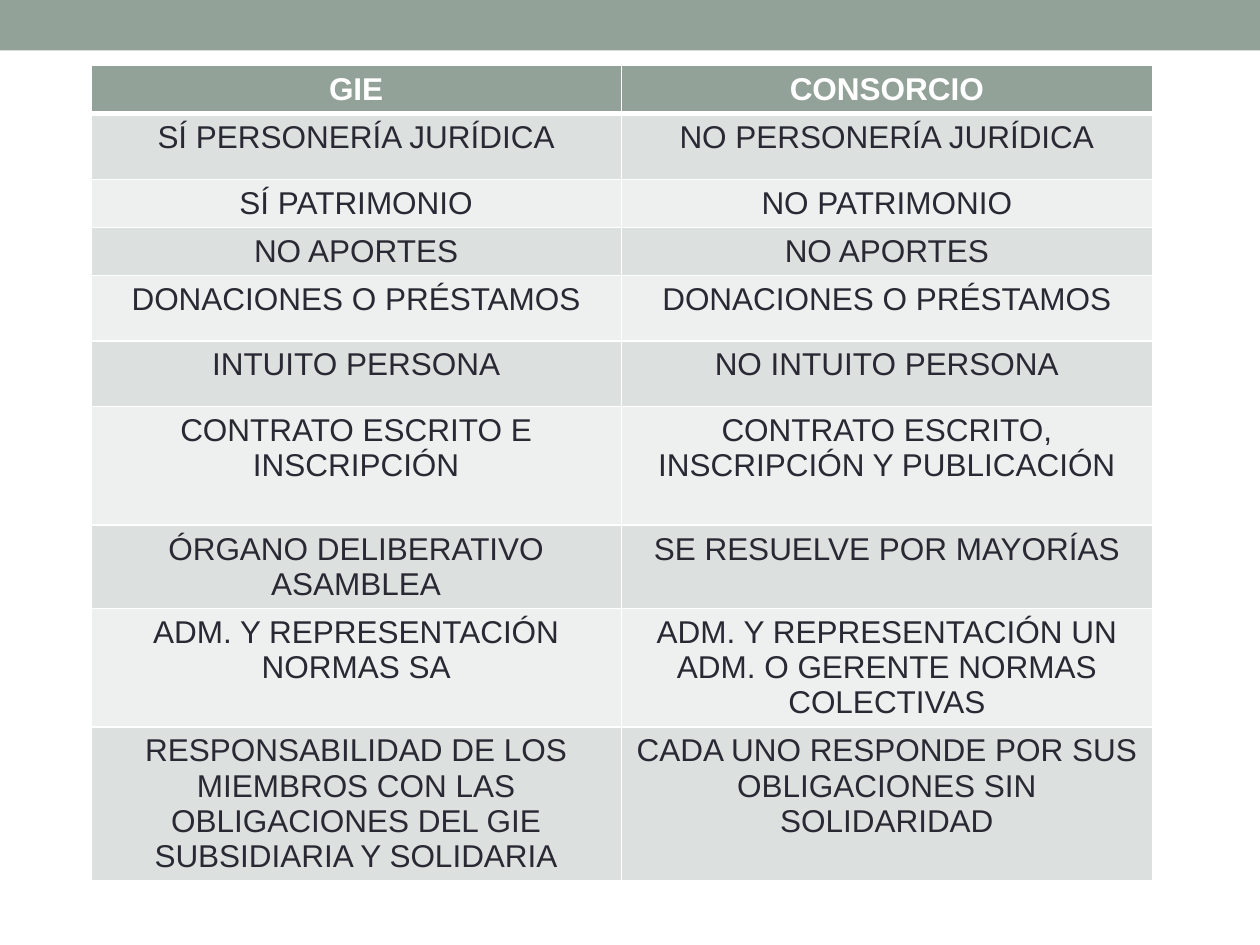
import lxml.etree
import pptx
import pptx.dml.color
import pptx.enum.shapes
import pptx.enum.text
import pptx.oxml.ns
import pptx.util
from pptx.util import Cm

SAGE = "93A299"
WHITE = "FFFFFF"
INK = "292934"
BANDS = ("DCE0DE", "EEF0EF")
ROWS = [
    ("GIE", "CONSORCIO", 0.95),
    ("SÍ PERSONERÍA JURÍDICA", "NO PERSONERÍA JURÍDICA", 1.33),
    ("SÍ PATRIMONIO", "NO PATRIMONIO", 0.97),
    ("NO APORTES", "NO APORTES", 0.97),
    ("DONACIONES O PRÉSTAMOS", "DONACIONES O PRÉSTAMOS", 1.32),
    ("INTUITO PERSONA", "NO INTUITO PERSONA", 1.32),
    ("CONTRATO ESCRITO E INSCRIPCIÓN",
     "CONTRATO ESCRITO, INSCRIPCIÓN Y PUBLICACIÓN", 2.39),
    ("ÓRGANO DELIBERATIVO ASAMBLEA", "SE RESUELVE POR MAYORÍAS", 1.67),
    ("ADM. Y REPRESENTACIÓN NORMAS SA",
     "ADM. Y REPRESENTACIÓN UN ADM. O GERENTE NORMAS COLECTIVAS", 2.39),
    ("RESPONSABILIDAD DE LOS MIEMBROS CON LAS OBLIGACIONES DEL GIE "
     "SUBSIDIARIA Y SOLIDARIA",
     "CADA UNO RESPONDE POR SUS OBLIGACIONES SIN SOLIDARIDAD", 3.08),
]


def set_fill(fill, color):
    """Apply a solid hex colour to a fill."""
    fill.solid()
    fill.fore_color.rgb = pptx.dml.color.RGBColor.from_string(color)


def set_borders(cell, widths):
    """Draw white borders with point widths keyed by side."""
    properties = cell._tc.get_or_add_tcPr()
    qualified = pptx.oxml.ns.qn
    for side, width in widths.items():
        line = lxml.etree.SubElement(
            properties, qualified(f"a:ln{side}"), w=str(pptx.util.Pt(width)))
        solid = lxml.etree.SubElement(line, qualified("a:solidFill"))
        lxml.etree.SubElement(solid, qualified("a:srgbClr"), val=WHITE)


def format_cell(cell, text, row_index):
    """Write one cell in its header or band style."""
    header = row_index == 0
    set_borders(cell, {"L": 1, "R": 1, "T": 3 if row_index == 1 else 1,
                       "B": 3 if header else 1})
    set_fill(cell.fill, SAGE if header else BANDS[(row_index - 1) % 2])
    cell.text_frame.text = text
    paragraph = cell.text_frame.paragraphs[0]
    paragraph.alignment = pptx.enum.text.PP_ALIGN.CENTER
    font = paragraph.runs[0].font
    font.name = "Arial"
    font.size = pptx.util.Pt(18)
    font.bold = header
    set_fill(font.fill, WHITE if header else INK)


def add_top_band(slide, left, top, width, height):
    """Place the plain coloured band."""
    shape = slide.shapes.add_shape(
        pptx.enum.shapes.MSO_SHAPE.RECTANGLE, left, top, width, height)
    shape.shadow.inherit = False
    set_fill(shape.fill, SAGE)
    shape.line.fill.background()


def add_comparison_table(slide, left, top, width):
    """Place the two-column comparison in the given width."""
    height = Cm(sum(row[-1] for row in ROWS))
    table = slide.shapes.add_table(
        len(ROWS), 2, left, top, width, height).table
    for column in table.columns:
        column.width = width // 2
    for row_index, (*texts, row_height) in enumerate(ROWS):
        table.rows[row_index].height = Cm(row_height)
        for column_index, text in enumerate(texts):
            format_cell(table.cell(row_index, column_index), text, row_index)


def main():
    """Build and save the presentation."""
    presentation = pptx.Presentation()
    presentation.slide_width = Cm(25.4)
    presentation.slide_height = Cm(19.05)
    slide = presentation.slides.add_slide(presentation.slide_layouts[6])
    add_top_band(slide, 0, 0, presentation.slide_width, Cm(1.02))
    add_comparison_table(slide, Cm(1.83), Cm(1.32), Cm(21.4))
    presentation.save("out.pptx")


if __name__ == "__main__":
    main()
